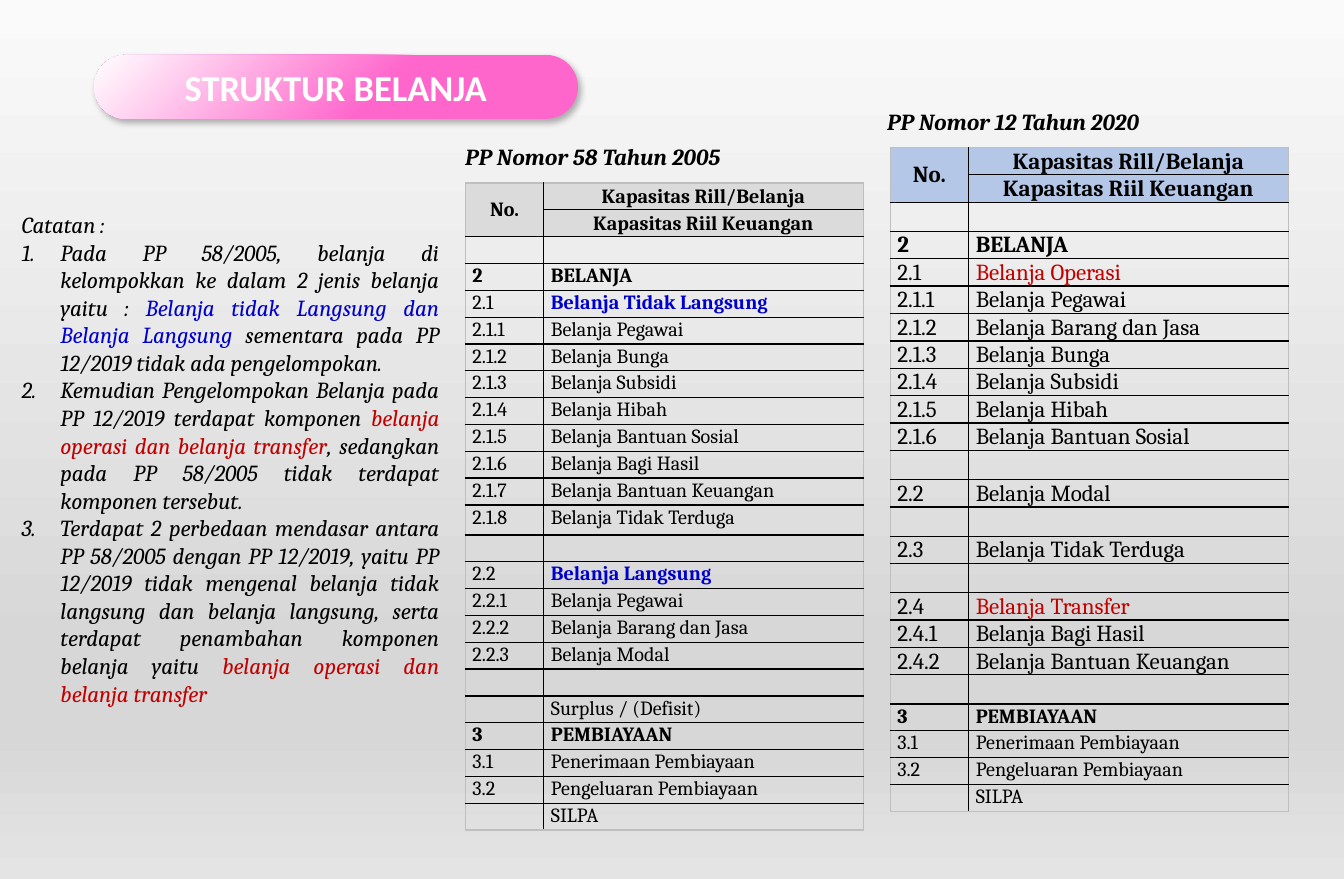
"""Build the STRUKTUR BELANJA slide comparing two spending structures."""
import copy
import dataclasses

import lxml.etree
import pptx
import pptx.dml.color
import pptx.enum.shapes
import pptx.enum.text
import pptx.oxml
import pptx.oxml.ns
import pptx.util

Pt = pptx.util.Pt
Align = pptx.enum.text.PP_ALIGN
Anchor = pptx.enum.text.MSO_ANCHOR
qn = pptx.oxml.ns.qn


@dataclasses.dataclass
class Theme:
    serif: str = "Cambria"
    sans: str = "Calibri"
    ink: str = "000000"
    white: str = "FFFFFF"
    pink: str = "FF66CC"
    blue: str = "0000CC"
    red: str = "C00000"
    edge: str = "BFBFBF"
    gray_head: str = "DBDBDB"
    blue_head: str = "B4C7E7"
    backdrop: tuple = ((0, "FAFAFA"), (74, "D7D7D7"), (83, "D7D7D7"), (100, "E4E4E4"))
    title: float = 25.4
    body: int = 16
    small: int = 14


theme = Theme()


def format_span(span, size, color=theme.ink, bold=False, italic=False, name=theme.serif):
    span.font.name = name
    span.font.size = Pt(size)
    span.font.bold = bold
    span.font.italic = italic
    span.font.color.rgb = pptx.dml.color.RGBColor.from_string(color)


def fill_gradient(fill, stops, angle):
    fill.gradient()
    fill.gradient_angle = angle
    stop_list = fill.gradient_stops[0]._gs.getparent()
    for _ in stops[2:]:
        stop_list.append(copy.deepcopy(stop_list[-1]))
    for stop, (position, color) in zip(fill.gradient_stops, stops):
        stop.position = position / 100
        stop.color.rgb = pptx.dml.color.RGBColor.from_string(color)


deck = pptx.Presentation()
deck.slide_width, deck.slide_height = Pt(936), Pt(612)
page = deck.slides.add_slide(deck.slide_layouts[5])
fill_gradient(page.background.fill, theme.backdrop, 270)

title_place = [Pt(value) for value in (65.5, 38.2, 337, 44.6)]
pill = page.shapes.add_shape(pptx.enum.shapes.MSO_SHAPE.ROUNDED_RECTANGLE, *title_place)
pill.adjustments[0] = 0.5
pill.line.fill.background()
fill_gradient(pill.fill, ((41, theme.pink), (100, theme.white)), 135)
pill.shadow.inherit = False
effects = pill._element.spPr.find(qn("a:effectLst"))
shadow = lxml.etree.SubElement(
    effects, qn("a:outerShdw"), blurRad=str(Pt(4.5)), dist=str(Pt(2.6)), dir="3180000", rotWithShape="0")
shade = lxml.etree.SubElement(shadow, qn("a:srgbClr"), val=theme.ink)
lxml.etree.SubElement(shade, qn("a:alpha"), val="30000")

title = page.shapes.title
title._element.addprevious(pill._element)
title.left, title.top, title.width, title.height = title_place
title.text_frame.text = "STRUKTUR BELANJA"
title.text_frame.vertical_anchor = Anchor.MIDDLE
title.text_frame.paragraphs[0].alignment = Align.CENTER
format_span(title.text_frame.paragraphs[0].runs[0], theme.title, theme.white, True, name=theme.sans)

header = [("No.", "Kapasitas Rill/Belanja"), ("", "Kapasitas Riil Keuangan"), ("", "")]
financing = [("3", "PEMBIAYAAN"), ("3.1", "Penerimaan Pembiayaan"),
             ("3.2", "Pengeluaran Pembiayaan"), ("", "SILPA")]
rows_2005 = header + [
    ("2", "BELANJA"), ("2.1", "Belanja Tidak Langsung"), ("2.1.1", "Belanja Pegawai"),
    ("2.1.2", "Belanja Bunga"), ("2.1.3", "Belanja Subsidi"), ("2.1.4", "Belanja Hibah"),
    ("2.1.5", "Belanja Bantuan Sosial"), ("2.1.6", "Belanja Bagi Hasil"),
    ("2.1.7", "Belanja Bantuan Keuangan"), ("2.1.8", "Belanja Tidak Terduga"), ("", ""),
    ("2.2", "Belanja Langsung"), ("2.2.1", "Belanja Pegawai"),
    ("2.2.2", "Belanja Barang dan Jasa"), ("2.2.3", "Belanja Modal"), ("", ""),
    ("", "Surplus / (Defisit)")] + financing
rows_2020 = header + [
    ("2", "BELANJA"), ("2.1", "Belanja Operasi"), ("2.1.1", "Belanja Pegawai"),
    ("2.1.2", "Belanja Barang dan Jasa"), ("2.1.3", "Belanja Bunga"),
    ("2.1.4", "Belanja Subsidi"), ("2.1.5", "Belanja Hibah"),
    ("2.1.6", "Belanja Bantuan Sosial"), ("", ""), ("2.2", "Belanja Modal"), ("", ""),
    ("2.3", "Belanja Tidak Terduga"), ("", ""), ("2.4", "Belanja Transfer"),
    ("2.4.1", "Belanja Bagi Hasil"), ("2.4.2", "Belanja Bantuan Keuangan"), ("", "")] + financing
accents = {"Belanja Operasi": theme.red, "Belanja Transfer": theme.red,
           "Belanja Tidak Langsung": theme.blue, "Belanja Langsung": theme.blue}
row_heights = {theme.body: 19.1, theme.small: 18.7}

for rows, left, top, main_size, head_color, tall_row in (
        (rows_2020, 619.9, 102.6, theme.body, theme.blue_head, None),
        (rows_2005, 324, 127.4, theme.small, theme.gray_head, 12)):
    table = page.shapes.add_table(len(rows), 2, Pt(left), Pt(top), Pt(277.2), Pt(450)).table
    table.first_row = table.horz_banding = False
    table.columns[0].width, table.columns[1].width = Pt(54.7), Pt(222.5)
    financing_start = len(rows) - len(financing)
    for index, row in enumerate(rows):
        size = main_size if index < financing_start else theme.small
        table.rows[index].height = Pt(20.9 if index == tall_row else row_heights[size])
        in_header = index < 2
        for column, text in enumerate(row):
            cell = table.cell(index, column)
            cell.margin_left = cell.margin_right = Pt(5)
            cell.margin_top, cell.margin_bottom = Pt(0.7), Pt(0)
            if in_header:
                cell.vertical_anchor = Anchor.MIDDLE
                cell.fill.solid()
                cell.fill.fore_color.rgb = pptx.dml.color.RGBColor.from_string(head_color)
            else:
                cell.fill.background()
            para = cell.text_frame.paragraphs[0]
            para.alignment = Align.CENTER if in_header else Align.LEFT
            if text:
                para.text = text
                color = accents.get(text, theme.ink)
                bold = in_header or row[0] in ("2", "3") or color == theme.blue
                format_span(para.runs[0], size, color, bold)
            else:
                para._p.get_or_add_endParaRPr().set("sz", str(size * 100))
            outer_sides = (column == 0, column == 1, index == 0, index == len(rows) - 1)
            for order, (side, outer) in enumerate(zip("LRTB", outer_sides)):
                border = pptx.oxml.parse_xml(
                    f'<a:ln{side} xmlns:a="http://schemas.openxmlformats.org/drawingml/2006/main" '
                    f'w="{Pt(1)}"><a:solidFill><a:srgbClr val="{theme.edge if outer else theme.ink}"/>'
                    f'</a:solidFill></a:ln{side}>')
                cell._tc.get_or_add_tcPr().insert(order, border)
    table.cell(0, 0).merge(table.cell(1, 0))

captions = [(324, 99.4, 198, 19.4, [[("PP Nomor 58 Tahun 2005", theme.ink)]]),
            (617.8, 74.9, 198, 19.4, [[("PP Nomor 12 Tahun 2020", theme.ink)]])]
notes = (15.1, 144.7, 290.9, 349.2, [
    [("Catatan :", theme.ink)],
    [("Pada PP 58/2005, belanja di kelompokkan ke dalam 2 jenis belanja yaitu : ", theme.ink),
     ("Belanja tidak Langsung dan Belanja Langsung ", theme.blue),
     ("sementara pada PP 12/2019 tidak ada pengelompokan.", theme.ink)],
    [("Kemudian Pengelompokan Belanja pada PP 12/2019 terdapat komponen ", theme.ink),
     ("belanja operasi dan belanja transfer", theme.red),
     (", sedangkan pada PP 58/2005 tidak terdapat komponen tersebut.", theme.ink)],
    [("Terdapat 2 perbedaan mendasar antara PP 58/2005 dengan PP 12/2019, yaitu PP 12/2019 tidak "
      "mengenal belanja tidak langsung dan belanja langsung, serta terdapat penambahan komponen "
      "belanja yaitu ", theme.ink),
     ("belanja operasi dan belanja transfer", theme.red)]])

for left, top, width, height, paragraphs in captions + [notes]:
    box = page.shapes.add_textbox(Pt(left), Pt(top), Pt(width), Pt(height))
    frame = box.text_frame
    frame.word_wrap = True
    frame.vertical_anchor = Anchor.MIDDLE
    frame.margin_left = frame.margin_right = frame.margin_top = frame.margin_bottom = 0
    for index, pieces in enumerate(paragraphs):
        para = frame.add_paragraph() if index else frame.paragraphs[0]
        para.alignment = Align.JUSTIFY
        if index:
            properties = para._p.get_or_add_pPr()
            properties.set("marL", str(Pt(27)))
            properties.set("indent", str(-Pt(27)))
            lxml.etree.SubElement(properties, qn("a:buFont"), typeface="+mj-lt")
            lxml.etree.SubElement(properties, qn("a:buAutoNum"), type="arabicPeriod")
        for text, color in pieces:
            span = para.add_run()
            span.text = text
            format_span(span, theme.body, color, len(paragraphs) == 1, True)

deck.save("out.pptx")
